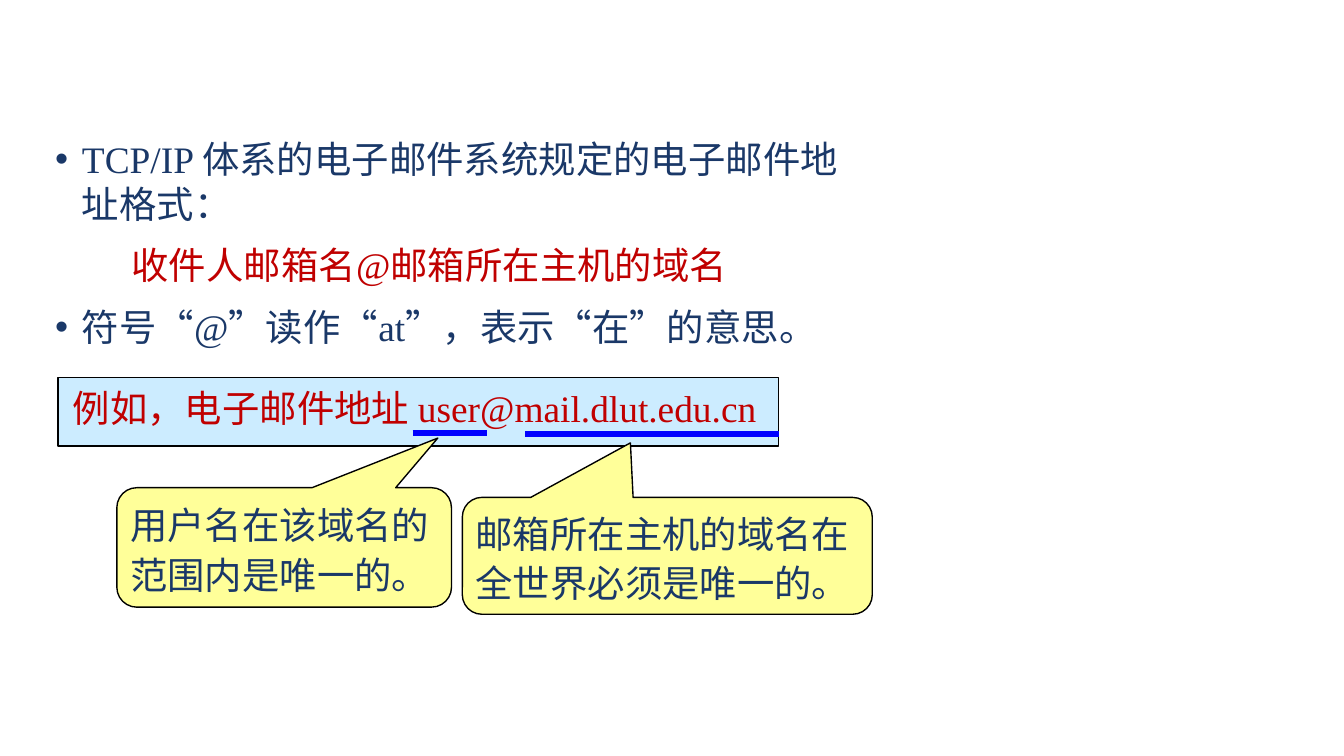
from pptx import Presentation
from pptx.dml.color import RGBColor
from pptx.enum.shapes import MSO_CONNECTOR, MSO_SHAPE as SHAPE
from pptx.enum.text import MSO_ANCHOR as ANCHOR, MSO_AUTO_SIZE, PP_ALIGN as ALIGN
from pptx.oxml.ns import qn
from pptx.util import Pt
from lxml.etree import SubElement

NAVY = RGBColor(0x1A, 0x38, 0x68)
RED = RGBColor(0xC0, 0x00, 0x00)
BLUE = RGBColor(0x00, 0x00, 0xFF)
SKY = RGBColor(0xCC, 0xEC, 0xFF)
YELLOW = RGBColor(0xFF, 0xFF, 0x99)
BLACK = RGBColor(0x00, 0x00, 0x00)

LATIN_FONT, CJK_FONT = "Times New Roman", "Noto Sans CJK SC"
SIZE = 20
BODY_LEADING, BOX_LEADING = 23.6, 26.3


def add_run(p, text, color, leading):
    p.alignment = ALIGN.LEFT
    p.line_spacing = Pt(leading)
    r = p.add_run()
    r.text = text
    r.font.name = LATIN_FONT
    r.font.size = Pt(SIZE)
    r.font.color.rgb = color
    SubElement(r._r.get_or_add_rPr(), qn("a:ea"), typeface=CJK_FONT)


def set_margins(tf, left, top, right, bottom):
    tf.margin_left, tf.margin_top = Pt(left), Pt(top)
    tf.margin_right, tf.margin_bottom = Pt(right), Pt(bottom)


def add_body(s, items):
    """Fill the body placeholder with (text, colour, indent, bulleted) items."""
    sp = s.placeholders[1]
    sp.left, sp.top, sp.width, sp.height = Pt(22.3), Pt(70), Pt(453), Pt(125)
    tf = sp.text_frame
    tf.auto_size = MSO_AUTO_SIZE.NONE
    tf.vertical_anchor = ANCHOR.TOP
    set_margins(tf, 7.2, 3.6, 7.2, 3.6)
    for i, (text, color, indent, bulleted) in enumerate(items):
        p = tf.paragraphs[0] if i == 0 else tf.add_paragraph()
        pPr = p._p.get_or_add_pPr()
        pPr.set("marL", str(Pt(indent)))
        pPr.set("indent", str(Pt(-indent if bulleted else 0)))
        if bulleted:
            SubElement(pPr, qn("a:buFont"), typeface="Arial")
            SubElement(pPr, qn("a:buChar"), char="•")
        else:
            SubElement(pPr, qn("a:buNone"))
        p.space_before = Pt(9.5 if i else 0)
        p.space_after = Pt(0)
        add_run(p, text, color, BODY_LEADING)


def add_box(s, kind, left, top, width, height, fill, lines, color):
    """Outlined shape with one paragraph per line of text."""
    sp = s.shapes.add_shape(kind, Pt(left), Pt(top), Pt(width), Pt(height))
    sp.shadow.inherit = False
    sp.fill.solid()
    sp.fill.fore_color.rgb = fill
    sp.line.color.rgb = BLACK
    sp.line.width = Pt(0.75)
    tf = sp.text_frame
    tf.word_wrap = True
    tf.vertical_anchor = ANCHOR.MIDDLE
    set_margins(tf, 4, 0, 4, 0)
    for i, text in enumerate(lines):
        p = tf.paragraphs[0] if i == 0 else tf.add_paragraph()
        add_run(p, text, color, BOX_LEADING)
    return sp


def add_callout(s, left, top, width, height, tip, lines):
    sp = add_box(s, SHAPE.ROUNDED_RECTANGULAR_CALLOUT, left, top, width, height,
                 YELLOW, lines, NAVY)
    sp.adjustments[0], sp.adjustments[1] = tip
    sp.adjustments[2] = 0.167


def add_underline(s, x1, x2, y):
    line = s.shapes.add_connector(MSO_CONNECTOR.STRAIGHT, Pt(x1), Pt(y), Pt(x2), Pt(y))
    line.line.color.rgb = BLUE
    line.line.width = Pt(3)
    SubElement(line._element.spPr, qn("a:effectLst"))


def main():
    prs = Presentation()
    prs.slide_width, prs.slide_height = Pt(720), Pt(405)
    s = prs.slides.add_slide(prs.slide_layouts[1])
    title = s.shapes.title._element
    title.getparent().remove(title)

    # Address format
    add_body(s, [
        ("TCP/IP 体系的电子邮件系统规定的电子邮件地址格式：", NAVY, 14.4, True),
        ("收件人邮箱名@邮箱所在主机的域名", RED, 41, False),
        ("符号“@”读作“at”，表示“在”的意思。", NAVY, 14.4, True),
    ])

    # Example address
    example = add_box(s, SHAPE.RECTANGLE, 31, 202.3, 386, 36.7, SKY,
                      ["例如，电子邮件地址 user@mail.dlut.edu.cn"], RED)
    example.text_frame.vertical_anchor = ANCHOR.TOP
    set_margins(example.text_frame, 8, 1.5, 0, 0)

    # Domain name part
    add_underline(s, 281.5, 417.5, 232.5)
    add_callout(s, 247.7, 266.5, 219.6, 62.6, (-0.09, -0.967),
                ["邮箱所在主机的域名在", "全世界必须是唯一的。"])

    # User name part
    add_underline(s, 221, 261, 232)
    add_callout(s, 62.6, 261.3, 179.3, 64, (0.459, -0.915),
                ["用户名在该域名的范围内是唯一的。"])

    prs.save("out.pptx")


if __name__ == "__main__":
    main()
